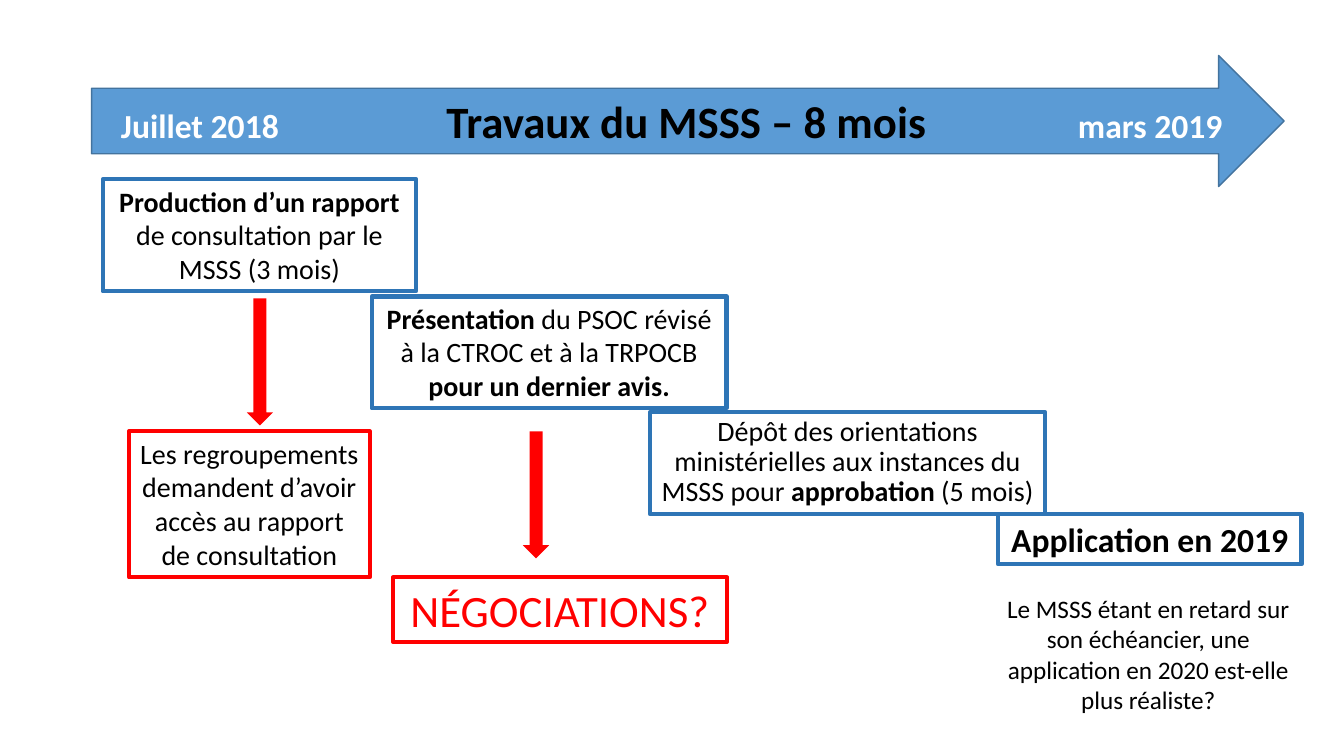
from pptx import Presentation
from pptx.dml.color import RGBColor
from pptx.enum import shapes, text
from pptx.oxml import parse_xml
from pptx.oxml.ns import nsdecls
from pptx.util import Cm, Pt

BLUE, RED, BLACK, WHITE = "2E75B6", "FF0000", "000000", "FFFFFF"


def colour(code):
    return RGBColor.from_string(code)


class Timeline:
    """Holds the slide and the style shared by its elements."""
    font = "Calibri"

    def __init__(self, slide):
        self.slide = slide

    def add_runs(self, frame, runs, size, ink=BLACK, align=text.PP_ALIGN.CENTER, spacing=1.0):
        """Fill the frame with one paragraph of (wording, bold) runs."""
        frame.word_wrap = True
        paragraph = frame.paragraphs[0]
        paragraph.alignment = align
        paragraph.line_spacing = spacing
        for wording, bold in runs:
            run = paragraph.add_run()
            run.text = wording
            run.font.name, run.font.size, run.font.bold = self.font, Pt(size), bold
            run.font.color.rgb = colour(ink)

    def title(self, place, wording, size):
        heading = self.slide.shapes.title
        heading.left, heading.top, heading.width, heading.height = map(Cm, place)
        heading.text_frame.vertical_anchor = text.MSO_ANCHOR.MIDDLE
        self.add_runs(heading.text_frame, [(wording, True)], size)
        return heading

    def arrow(self, kind, place, fill, line=None):
        arrow = self.slide.shapes.add_shape(kind, *map(Cm, place))
        arrow.shadow.inherit = False
        arrow.fill.solid()
        arrow.fill.fore_color.rgb = colour(fill)
        if line:
            arrow.line.color.rgb = colour(line)
            arrow.line.width = Pt(1)
        else:
            arrow.line.fill.background()
        return arrow

    def period(self, place, start, end):
        """Draw the long arrow with its start and end dates."""
        band = self.arrow(shapes.MSO_SHAPE.RIGHT_ARROW, place, "5B9BD5", "43739E")
        frame = band.text_frame
        frame.vertical_anchor = text.MSO_ANCHOR.MIDDLE
        frame.margin_left, frame.margin_top = Cm(0.74), Cm(0.32)
        paragraph = frame.paragraphs[0]
        paragraph._p.get_or_add_pPr().append(parse_xml(
            f'<a:tabLst {nsdecls("a")}><a:tab pos="{Cm(27.76)}" algn="r"/></a:tabLst>'))
        self.add_runs(frame, [(f"{start}\t{end}", True)], 24, WHITE, text.PP_ALIGN.LEFT)
        return band

    def step(self, place, runs, size=20, border=None, ink=BLACK, spacing=1.0):
        box = self.slide.shapes.add_textbox(*map(Cm, place))
        if border:
            box.line.color.rgb = colour(border)
            box.line.width = Pt(3)
        self.add_runs(box.text_frame, runs, size, ink, spacing=spacing)
        box.text_frame.auto_size = text.MSO_AUTO_SIZE.SHAPE_TO_FIT_TEXT


def main():
    deck = Presentation()
    deck.slide_width, deck.slide_height = Cm(33.87), Cm(19.05)
    timeline = Timeline(deck.slides.add_slide(deck.slide_layouts[5]))

    heading = timeline.title((10.6, 2.1, 13.4, 1.9), "Travaux du MSSS – 8 mois", 32)
    band = timeline.period((2.31, 1.4, 30.05, 3.3), "Juillet 2018", "mars 2019")
    heading.element.addprevious(band.element)  # the title lies on the band

    timeline.step((2.59, 4.52, 7.9, 2.82),
                  [("Production d’un rapport", True),
                   (" de consultation par le MSSS (3 mois)", False)], border=BLUE)
    timeline.step((9.37, 7.47, 8.94, 2.82),
                  [("Présentation", True),
                   (" du PSOC révisé à la CTROC et à la TRPOCB ", False),
                   ("pour un dernier avis.", True)], border=BLUE)
    timeline.step((16.38, 10.39, 9.96, 2.57),
                  [("Dépôt des orientations ministérielles aux instances du MSSS pour ", False),
                   ("approbation", True), (" (5 mois)", False)], border=BLUE, spacing=0.9)
    timeline.step((25.15, 12.95, 7.65, 1.27), [("Application en 2019", True)], 24, BLUE)
    timeline.step((9.91, 14.55, 8.41, 1.63), [("NÉGOCIATIONS?", False)], 32, RED, RED)
    timeline.step((3.25, 10.87, 6.07, 3.68),
                  [("Les regroupements demandent d’avoir accès au rapport de consultation",
                    False)], border=RED)
    timeline.step((24.94, 14.83, 8, 3.33),
                  [("Le MSSS étant en retard sur son échéancier, une application en 2020 "
                    "est-elle plus réaliste?", False)], 18)

    for left, top in ((6.22, 7.52), (13.18, 10.87)):
        timeline.arrow(shapes.MSO_SHAPE.DOWN_ARROW, (left, top, 0.66, 3.2), RED)

    deck.save("out.pptx")


if __name__ == "__main__":
    main()
